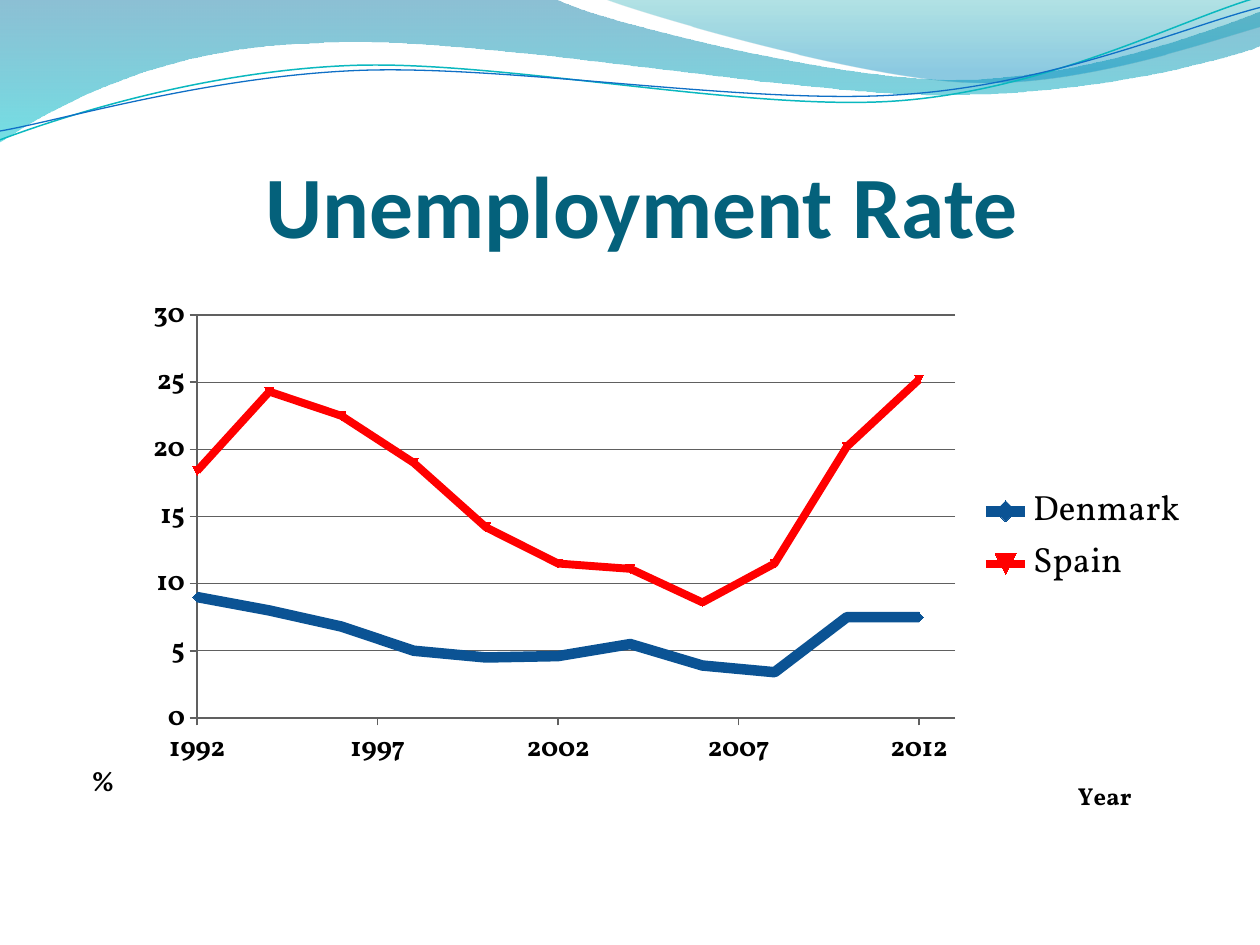
from math import cos, radians, sin

from lxml import etree
from pptx import Presentation
from pptx.chart.data import XyChartData
from pptx.dml.color import RGBColor
from pptx.enum.chart import (XL_CHART_TYPE, XL_LEGEND_POSITION,
                             XL_MARKER_STYLE, XL_TICK_MARK)
from pptx.enum.text import MSO_AUTO_SIZE
from pptx.oxml.ns import qn
from pptx.util import Inches, Pt

LINES = XL_CHART_TYPE.XY_SCATTER_LINES
RIGHT = XL_LEGEND_POSITION.RIGHT
AUTO_MARKER = XL_MARKER_STYLE.AUTOMATIC
OUTSIDE = XL_TICK_MARK.OUTSIDE
NO_TICK = XL_TICK_MARK.NONE
FIT_SHAPE = MSO_AUTO_SIZE.SHAPE_TO_FIT_TEXT

BLACK = RGBColor(0x00, 0x00, 0x00)
GRAY = RGBColor(0x60, 0x60, 0x60)
TITLE_TEAL = RGBColor(0x04, 0x61, 0x7B)
DENMARK_BLUE = RGBColor(0x0B, 0x53, 0x94)
SPAIN_RED = RGBColor(0xFF, 0x00, 0x00)
WAVE_BLUE = RGBColor(0x00, 0x74, 0xA1)
WAVE_CYAN = RGBColor(0x00, 0xC6, 0xCF)
CREST_TEAL = RGBColor(0x00, 0xA1, 0xA9)
CREST_BLUE = RGBColor(0x00, 0x8B, 0xBF)
LINE_TEAL = RGBColor(0x0A, 0xB8, 0xBF)
LINE_BLUE = RGBColor(0x0F, 0x6F, 0xC6)

COLS, ROWS = 10, 7.5
TILT = -2.7

WAVE = [(0, 0), (4.4, -0.01), (4.76, 0.17, 6.64, 0.63, 7.58, 0.63),
        (8.53, 0.63, 9.58, 0.26, 10, 0.09), (10.01, 0.36),
        (9.83, 0.44, 8.7, 0.76, 7.46, 0.75),
        (6.22, 0.75, 3.82, 0.28, 2.57, 0.34),
        (1.29, 0.36, 0.46, 0.83, -0.01, 1.13)]
CREST = [(4.79, -0.01), (5.09, 0.11, 6.82, 0.62, 7.69, 0.65),
         (8.56, 0.69, 9.61, 0.32, 10, 0.21), (10, 0)]
UPPER_LINE = [(0, 1.11), (0.48, 0.93, 1.58, 0.57, 2.77, 0.52),
              (3.95, 0.47, 5.93, 0.89, 7.13, 0.8),
              (8.33, 0.71, 9.38, 0.15, 9.98, -0.02)]
LOWER_LINE = [(0, 1.04), (0.47, 0.96, 1.64, 0.61, 2.83, 0.56),
              (4.03, 0.51, 5.97, 0.84, 7.17, 0.75),
              (8.36, 0.67, 9.41, 0.21, 10, 0.06)]

YEARS = range(1992, 2013, 2)
SERIES = [
    ("Denmark", [9, 8, 6.8, 5, 4.5, 4.6, 5.5, 3.9, 3.4, 7.5, 7.5], DENMARK_BLUE, 6),
    ("Spain", [18.4, 24.3, 22.5, 19, 14.2, 11.5, 11.1, 8.6, 11.5, 20.2, 25.2],
     SPAIN_RED, 4.5),
]


def turn(x, y, center, degrees):
    """Turn a point clockwise about a center."""
    a, dx, dy = radians(degrees), x - center[0], y - center[1]
    return center[0] + dx * cos(a) - dy * sin(a), center[1] + dx * sin(a) + dy * cos(a)


def place(element, index, x, y, w=None, h=None):
    """Give a chart part a manual layout in percent of the chart."""
    for old in element.findall(qn("c:layout")):
        element.remove(old)
    layout = etree.Element(qn("c:layout"))
    manual = etree.SubElement(layout, qn("c:manualLayout"))
    if element.tag == qn("c:plotArea"):
        etree.SubElement(manual, qn("c:layoutTarget")).set("val", "inner")
    for name in ("xMode", "yMode"):
        etree.SubElement(manual, qn(f"c:{name}")).set("val", "edge")
    for name, percent in zip("xywh", (x, y, w, h)):
        if percent is not None:
            etree.SubElement(manual, qn(f"c:{name}")).set("val", str(percent / 100))
    element.insert(index, layout)


class Deck:
    """Slide style and the current slide, measured in grid columns and rows."""

    def __init__(self):
        self.prs = Presentation()
        self.prs.slide_width, self.prs.slide_height = Inches(COLS), Inches(ROWS)
        self.col = self.prs.slide_width / COLS
        self.row = self.prs.slide_height / ROWS
        self.heading_font, self.body_font = "Calibri", "Vollkorn"
        self.s = self.prs.slides.add_slide(self.prs.slide_layouts[6])

    def box(self, x, y, w, h):
        return [round(v) for v in (x * self.col, y * self.row, w * self.col, h * self.row)]

    def outline(self, shapes, path, close, center=(0, 0), degrees=0):
        points = [turn(*step[i:i + 2], center, -degrees)
                  for step in path for i in range(0, len(step), 2)]
        points = [(x * self.col, y * self.row) for x, y in points]
        builder = shapes.build_freeform(*points[0])
        builder.add_line_segments(points[1:], close=close)
        sp = builder.convert_to_shape()
        segments = iter(sp.element.findall(".//" + qn("a:lnTo")))
        for step in path[1:]:
            first = next(segments)
            if len(step) == 6:
                curve = etree.Element(qn("a:cubicBezTo"))
                first.addprevious(curve)
                for segment in (first, next(segments), next(segments)):
                    curve.append(segment[0])
                    segment.getparent().remove(segment)
        sp.rotation = degrees
        sp.shadow.inherit = False
        return sp

    def wave(self, path, stops):
        sp = self.outline(self.s.shapes, path, True)
        sp.line.fill.background()
        sp.fill.gradient()
        sp.fill.gradient_angle = 270
        for stop, (position, color, _) in zip(sp.fill.gradient_stops, stops):
            stop.position = position
            stop.color.rgb = color
        colors = sp.element.spPr.findall(".//" + qn("a:srgbClr"))
        for color, (_, _, opacity) in zip(colors, stops):
            etree.SubElement(color, qn("a:alpha")).set("val", str(opacity * 1000))

    def curves(self, *lines):
        group = self.s.shapes.add_group_shape()
        for path, center, color, width in lines:
            sp = self.outline(group.shapes, path, False, center, TILT)
            sp.fill.background()
            sp.line.color.rgb = color
            sp.line.width = Pt(width)

    def title(self, text, x, y, w, h):
        tf = self.s.shapes.add_textbox(*self.box(x, y, w, h)).text_frame
        tf.word_wrap = False
        tf.auto_size = FIT_SHAPE
        p = tf.paragraphs[0]
        p.text = text
        self.style(p.font, 50, True, TITLE_TEAL, self.heading_font)

    def style(self, font, size, bold=False, color=BLACK, name=None):
        font.size, font.bold, font.name = Pt(size), bold, name or self.body_font
        font.color.rgb = color

    def axis(self, axis, title, title_size, low, high, spot):
        axis.minimum_scale, axis.maximum_scale, axis.major_unit = low, high, 5
        axis.major_tick_mark, axis.minor_tick_mark = OUTSIDE, NO_TICK
        axis.tick_labels.number_format = "0"
        axis.tick_labels.number_format_is_linked = False
        self.style(axis.tick_labels.font, 16, True)
        axis.format.line.color.rgb = GRAY
        axis.format.line.width = Pt(1)
        tf = axis.axis_title.text_frame
        tf.text = title
        self.style(tf.paragraphs[0].font, title_size, True)
        element = axis.axis_title.element
        element.find(".//" + qn("a:bodyPr")).set("rot", "0")
        place(element, 1, *spot)

    def chart(self, x, y, w, h):
        data = XyChartData()
        for name, rates, _, _ in SERIES:
            series = data.add_series(name)
            for year, rate in zip(YEARS, rates):
                series.add_data_point(year, rate)
        chart = self.s.shapes.add_chart(LINES, *self.box(x, y, w, h), data).chart
        chart.has_title = False
        self.style(chart.font, 10)
        chart.plots[0].vary_by_categories = False
        for series, (_, _, color, width) in zip(chart.plots[0].series, SERIES):
            series.smooth = False
            series.format.line.color.rgb = color
            series.format.line.width = Pt(width)
            marker = series.marker
            marker.style, marker.size = AUTO_MARKER, 5
            marker.format.fill.solid()
            marker.format.fill.fore_color.rgb = color
            marker.format.line.color.rgb = color
        self.axis(chart.category_axis, "Year", 14, 1992, 2013, (88.3, 86.8))
        self.axis(chart.value_axis, "%", 16, 0, 30, (1, 83.6))
        chart.category_axis.has_major_gridlines = False
        chart.value_axis.major_gridlines.format.line.color.rgb = GRAY
        chart.has_legend = True
        chart.legend.position = RIGHT
        chart.legend.include_in_layout = False
        self.style(chart.legend.font, 20)
        place(chart.element.find(".//" + qn("c:plotArea")), 0, 10.85, 5.6, 67, 71.2)
        place(chart.element.find(".//" + qn("c:legend")), 1, 79.65, 35.4, 19, 19)


def main():
    deck = Deck()
    deck.wave(WAVE, [(0, WAVE_BLUE, 45), (1, WAVE_CYAN, 55)])
    deck.wave(CREST, [(0, CREST_TEAL, 30), (0.8, CREST_BLUE, 45)])
    deck.curves((UPPER_LINE, (4.99, 0.58), LINE_TEAL, 0.85),
                (LOWER_LINE, (5, 0.59), LINE_BLUE, 0.75))
    deck.chart(0.59, 2.25, 8.98, 4.49)
    deck.title("Unemployment Rate", 2.01, 1.15, 6.23, 0.94)
    deck.prs.save("out.pptx")


if __name__ == "__main__":
    main()
